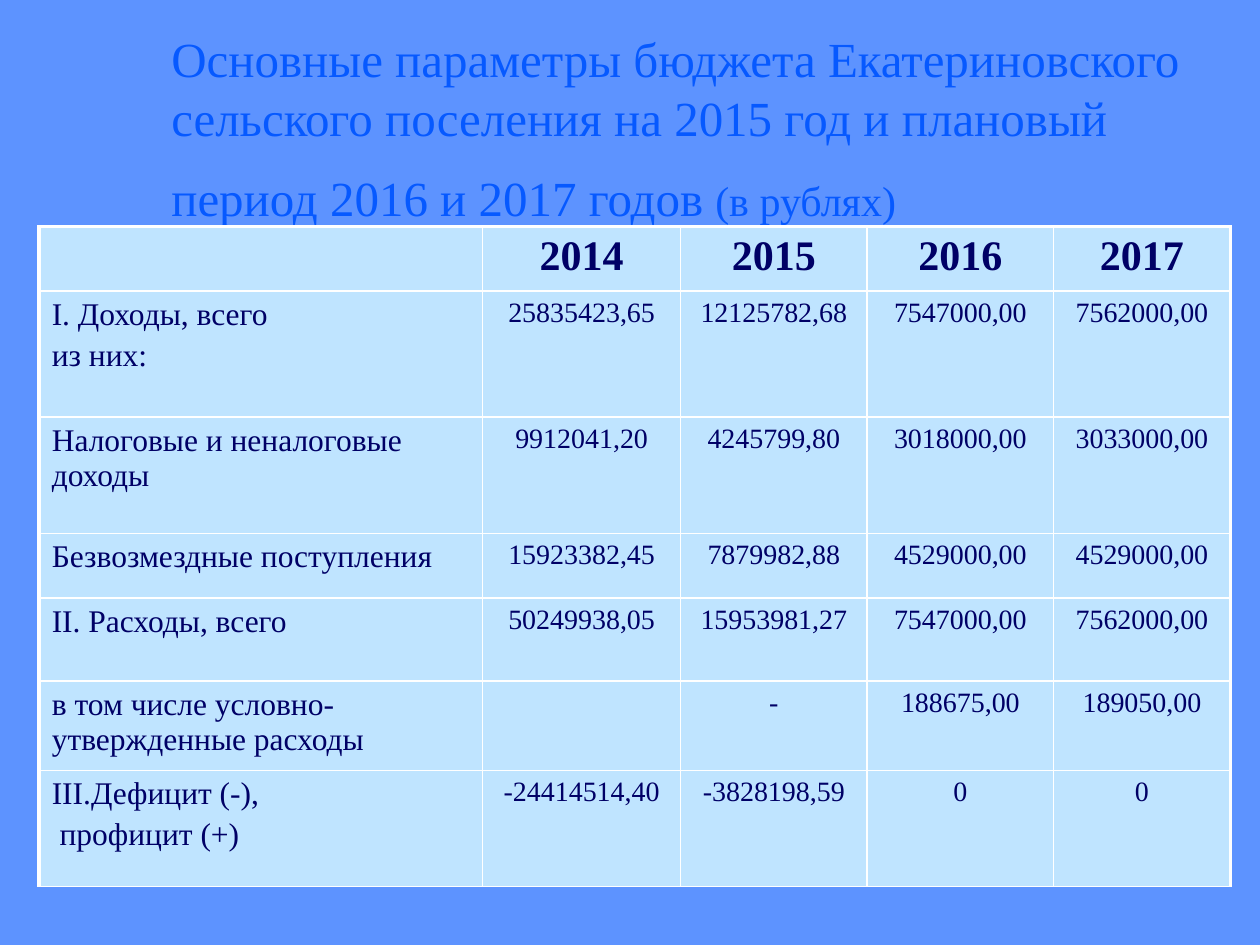
from lxml import etree
from pptx import Presentation
from pptx import util as u
from pptx.dml.color import RGBColor
from pptx.enum import text
from pptx.oxml import ns

FONT = "Times New Roman"
HUES = {"back": "5D93FF", "title": "0659FF", "ink": "000066",
        "cell": "BFE4FF", "line": "FFFFFF"}

# Table content: a label may hold several paragraphs
ROWS = [
    ([], "2014", "2015", "2016", "2017"),
    (["I. Доходы, всего", "из них:"],
     "25835423,65", "12125782,68", "7547000,00", "7562000,00"),
    (["Налоговые и неналоговые доходы"],
     "9912041,20", "4245799,80", "3018000,00", "3033000,00"),
    (["Безвозмездные поступления"],
     "15923382,45", "7879982,88", "4529000,00", "4529000,00"),
    (["II. Расходы, всего"],
     "50249938,05", "15953981,27", "7547000,00", "7562000,00"),
    (["в том числе условно-утвержденные расходы"],
     "", "-", "188675,00", "189050,00"),
    (["III.Дефицит (-),", " профицит (+)"],
     "-24414514,40", "-3828198,59", "0", "0"),
]
WIDTHS = [8.94, 3.99, 3.76, 3.76, 3.56]
HEIGHTS = [1.3, 2.54, 2.34, 1.3, 1.68, 1.8, 2.34]


def hue(name):
    return RGBColor.from_string(HUES[name])


def add_run(para, words, size, color, bold=False):
    run = para.add_run()
    run.text = words
    font = run.font
    font.name, font.size, font.bold = FONT, u.Pt(size), bold
    font.color.rgb = hue(color)


def add_title(slide):
    title = slide.shapes.title
    title.left, title.top = u.Cm(3.2), u.Cm(0.58)
    title.width, title.height = u.Cm(21.64), u.Cm(4.06)
    frame = title.text_frame
    frame.word_wrap = True
    frame.auto_size = text.MSO_AUTO_SIZE.NONE
    frame.vertical_anchor = text.MSO_ANCHOR.MIDDLE
    para = frame.paragraphs[0]
    para.alignment = text.PP_ALIGN.LEFT
    add_run(para, "Основные параметры бюджета Екатериновского сельского "
            "поселения на 2015 год и плановый период 2016 и 2017 годов ",
            28, "title")
    add_run(para, "(в рублях)", 24, "title")
    add_run(para, " ", 40, "title")


def add_edge(cell, side, width):
    props = cell._tc.get_or_add_tcPr()
    edge = etree.SubElement(props, ns.qn("a:ln" + side), w=str(u.Pt(width)))
    fill = etree.SubElement(edge, ns.qn("a:solidFill"))
    etree.SubElement(fill, ns.qn("a:srgbClr"), val=HUES["line"])


def fill_cell(cell, lines, size, align, bold):
    frame = cell.text_frame
    for i, words in enumerate(lines):
        para = frame.add_paragraph() if i else frame.paragraphs[0]
        para.alignment = align
        if i:
            para.space_before = u.Pt(size * 0.2)
        add_run(para, words, size, "ink", bold)


def add_grid(slide):
    frame = slide.shapes.add_table(
        len(ROWS), len(WIDTHS), u.Cm(0.79), u.Cm(4.57),
        u.Cm(sum(WIDTHS)), u.Cm(sum(HEIGHTS)))
    grid = frame.table
    for col, width in zip(grid.columns, WIDTHS):
        col.width = u.Cm(width)
    for row, height in zip(grid.rows, HEIGHTS):
        row.height = u.Cm(height)

    for r, (label, *sums) in enumerate(ROWS):
        for c, lines in enumerate([label] + [[s] if s else [] for s in sums]):
            cell = grid.cell(r, c)
            # Thick lines on the outer frame, except below
            thick = {"L": c == 0, "R": c == len(WIDTHS) - 1,
                     "T": r == 0, "B": False}
            for side, outer in thick.items():
                add_edge(cell, side, 2.25 if outer else 1)
            cell.fill.solid()
            cell.fill.fore_color.rgb = hue("cell")
            size = 24 if r == 0 else 16 if c else 18
            align = text.PP_ALIGN.CENTER if c else text.PP_ALIGN.LEFT
            fill_cell(cell, lines, size, align, r == 0)


def main():
    deck = Presentation()
    deck.slide_width, deck.slide_height = u.Cm(25.4), u.Cm(19.05)
    slide = deck.slides.add_slide(deck.slide_layouts[5])
    back = slide.background.fill
    back.solid()
    back.fore_color.rgb = hue("back")
    add_title(slide)
    add_grid(slide)
    deck.save("out.pptx")


if __name__ == "__main__":
    main()
